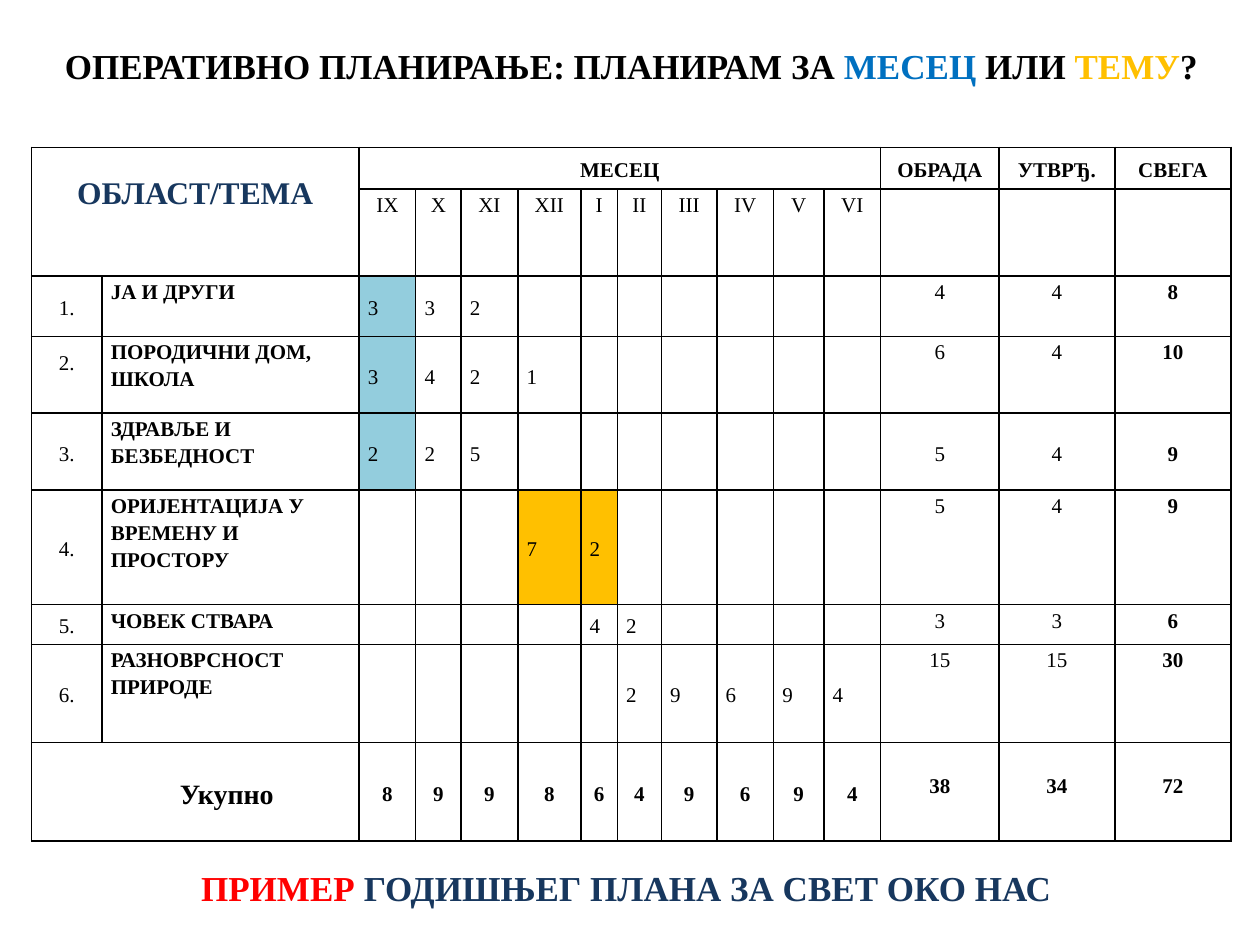
"""Builds the yearly teaching plan slide with a table of topics by month."""
from lxml import etree
from pptx import Presentation
from pptx.dml.color import RGBColor
from pptx.enum import text
from pptx.oxml import ns
from pptx.util import Inches, Pt

FONT = "Times New Roman"
BLACK = RGBColor(0x00, 0x00, 0x00)
WHITE = RGBColor(0xFF, 0xFF, 0xFF)
NAVY = RGBColor(0x17, 0x37, 0x5E)
RED = RGBColor(0xFF, 0x00, 0x00)
BLUE = RGBColor(0x00, 0x70, 0xC0)
AMBER = RGBColor(0xFF, 0xC0, 0x00)
SKY = RGBColor(0x93, 0xCD, 0xDD)

LEFT, CENTER = text.PP_ALIGN.LEFT, text.PP_ALIGN.CENTER
TOP, MIDDLE = text.MSO_ANCHOR.TOP, text.MSO_ANCHOR.MIDDLE

COLUMNS = [0.56, 2.04, 0.45, 0.36, 0.45, 0.5, 0.29, 0.35, 0.44, 0.45, 0.4, 0.45,
           0.94, 0.92, 0.92]
ROWS = [0.33, 0.69, 0.48, 0.61, 0.61, 0.91, 0.31, 0.78, 0.78]
FIRST_MONTH, FIRST_SUM, FIRST_TOPIC = 2, 12, 2
MONTHS = ["IX", "X", "XI", "XII", "I", "II", "III", "IV", "V", "VI"]
SUM_HEADS = ["ОБРАДА", "УТВРЂ.", "СВЕГА"]
TOPICS = [
    ("ЈА И ДРУГИ", {"IX": 3, "X": 3, "XI": 2}, (4, 4, 8)),
    ("ПОРОДИЧНИ ДОМ, ШКОЛА", {"IX": 3, "X": 4, "XI": 2, "XII": 1}, (6, 4, 10)),
    ("ЗДРАВЉЕ И БЕЗБЕДНОСТ", {"IX": 2, "X": 2, "XI": 5}, (5, 4, 9)),
    ("ОРИЈЕНТАЦИЈА У ВРЕМЕНУ И ПРОСТОРУ", {"XII": 7, "I": 2}, (5, 4, 9)),
    ("ЧОВЕК СТВАРА", {"I": 4, "II": 2}, (3, 3, 6)),
    ("РАЗНОВРСНОСТ ПРИРОДЕ", {"II": 2, "III": 9, "IV": 6, "V": 9, "VI": 4}, (15, 15, 30)),
]
MONTH_TOTALS = [8, 9, 9, 8, 6, 4, 9, 6, 9, 4]
GRAND_TOTALS = [38, 34, 72]


def format_run(r, size, color, bold):
    """Set the font of one run."""
    r.font.name = FONT
    r.font.size = Pt(size)
    r.font.bold = bold
    r.font.color.rgb = color


def write_heading(sp, parts):
    """Fill a white box with one centred line of coloured parts."""
    sp.fill.solid()
    sp.fill.fore_color.rgb = WHITE
    tf = sp.text_frame
    tf.word_wrap = True
    tf.vertical_anchor = MIDDLE
    p = tf.paragraphs[0]
    p.alignment = CENTER
    for words, color in parts:
        r = p.add_run()
        r.text = words
        format_run(r, 20, color, True)


def style_cell(cell):
    """Give a cell narrow margins, no fill and black borders."""
    cell.margin_left = cell.margin_right = Inches(0.07)
    cell.margin_top, cell.margin_bottom = Inches(0.01), 0
    cell.fill.background()
    tc_pr = cell._tc.get_or_add_tcPr()
    for i, side in enumerate(("lnL", "lnR", "lnT", "lnB")):
        ln = etree.Element(ns.qn(f"a:{side}"), w=str(Pt(1)))
        fill = etree.SubElement(ln, ns.qn("a:solidFill"))
        etree.SubElement(fill, ns.qn("a:srgbClr"), val=str(BLACK))
        tc_pr.insert(i, ln)


def write_cell(cell, words, align=CENTER, anchor=MIDDLE, bold=False, size=12, color=BLACK):
    """Write one formatted paragraph into a cell."""
    cell.text_frame.text = str(words)
    cell.vertical_anchor = anchor
    p = cell.text_frame.paragraphs[0]
    p.alignment = align
    p.line_spacing = 1.15
    format_run(p.runs[0], size, color, bold)


def add_grid(s):
    """Add the empty bordered table and return it."""
    table = s.shapes.add_table(len(ROWS), len(COLUMNS), Inches(0.25), Inches(1.17),
                               Inches(sum(COLUMNS)), Inches(sum(ROWS))).table
    table.first_row = table.horz_banding = False
    for column, width in zip(table.columns, COLUMNS):
        column.width = Inches(width)
    for row, height in zip(table.rows, ROWS):
        row.height = Inches(height)
        for cell in row.cells:
            style_cell(cell)
    return table


def fill_header(table):
    """Write the two header rows."""
    corner = table.cell(0, 0)
    corner.merge(table.cell(1, 1))
    write_cell(corner, "ОБЛАСТ/ТЕМА", anchor=TOP, bold=True, size=18, color=NAVY)
    corner.margin_top = Inches(0.19)
    table.cell(0, FIRST_MONTH).merge(table.cell(0, FIRST_SUM - 1))
    write_cell(table.cell(0, FIRST_MONTH), "МЕСЕЦ", bold=True)
    for col, head in enumerate(SUM_HEADS, FIRST_SUM):
        write_cell(table.cell(0, col), head, bold=True)
    for col, month in enumerate(MONTHS, FIRST_MONTH):
        write_cell(table.cell(1, col), month, anchor=TOP)


def fill_topics(table):
    """Write one row for each topic and shade the planned cells."""
    for number, (name, hours, sums) in enumerate(TOPICS, 1):
        row = number - 1 + FIRST_TOPIC
        write_cell(table.cell(row, 0), f"{number}.")
        write_cell(table.cell(row, 1), name, LEFT, TOP, bold=True)
        for month, value in hours.items():
            cell = table.cell(row, FIRST_MONTH + MONTHS.index(month))
            write_cell(cell, value, LEFT)
            if month == "IX" or number == 4:
                cell.fill.solid()
                cell.fill.fore_color.rgb = AMBER if number == 4 else SKY
        for col, value in enumerate(sums, FIRST_SUM):
            write_cell(table.cell(row, col), value, anchor=MIDDLE if number == 3 else TOP,
                       bold=col == len(COLUMNS) - 1)
    table.cell(FIRST_TOPIC + 1, 0).margin_bottom = Inches(0.22)


def fill_totals(table):
    """Write the last row with the totals."""
    row = len(ROWS) - 1
    label = table.cell(row, 0)
    label.merge(table.cell(row, 1))
    write_cell(label, "Укупно", bold=True, size=16)
    label.margin_left = Inches(0.57)
    for col, value in enumerate(MONTH_TOTALS, FIRST_MONTH):
        write_cell(table.cell(row, col), value, bold=True)
    for col, value in enumerate(GRAND_TOTALS, FIRST_SUM):
        cell = table.cell(row, col)
        write_cell(cell, value, anchor=TOP, bold=True)
        cell.margin_top = Inches(0.23)


def main():
    """Build and save the slide."""
    prs = Presentation()
    prs.slide_width, prs.slide_height = Inches(10), Inches(7.5)
    s = prs.slides.add_slide(prs.slide_layouts[5])
    title = s.shapes.title
    title.left, title.top = Inches(-0.04), Inches(6.58)
    title.width, title.height = Inches(10.02), Inches(0.92)
    write_heading(title, [("ПРИМЕР ", RED), ("ГОДИШЊЕГ ПЛАНА ЗА СВЕТ ОКО НАС", NAVY)])
    table = add_grid(s)
    fill_header(table)
    fill_topics(table)
    fill_totals(table)
    question = s.shapes.add_textbox(Inches(0.02), 0, Inches(9.98), Inches(1.04))
    write_heading(question, [("ОПЕРАТИВНО ПЛАНИРАЊЕ: ПЛАНИРАМ ЗА ", BLACK), ("МЕСЕЦ ", BLUE),
                             ("ИЛИ ", BLACK), ("ТЕМУ", AMBER), ("?", BLACK)])
    prs.save("out.pptx")


if __name__ == "__main__":
    main()
